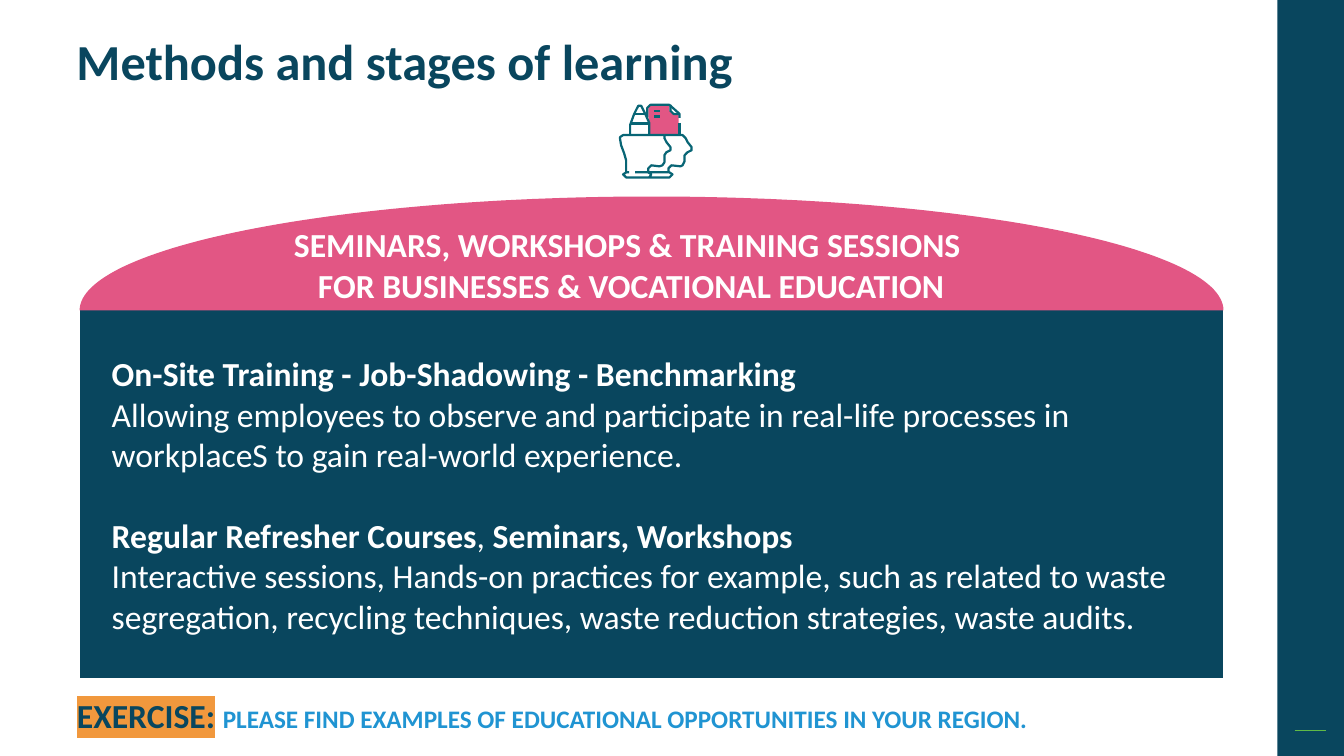
import math
from lxml import etree
from pptx import Presentation, util as u
from pptx.dml.color import RGBColor
from pptx.enum import shapes, text
from pptx.oxml import ns

CELL = u.Inches(0.01)  # the slide is a grid of 1333 columns by 750 rows
COLUMNS, ROWS = 1333, 750
NAVY, PINK, TEAL, WHITE = "09465E", "E25684", "086575", "FFFFFF"

presentation = Presentation()
presentation.slide_width, presentation.slide_height = COLUMNS * CELL, ROWS * CELL
slide = presentation.slides.add_slide(presentation.slide_layouts[6])


def paint(target, color):
    """Give a fill, a line's fill or a font one solid hex colour."""
    if hasattr(target, "solid"):
        target.solid()
        target = target.fore_color
    else:
        target = target.color
    target.rgb = RGBColor.from_string(color)


def outline(contours, fill=None, line=None):
    """Draw contours of grid points as one filled outline or as open strokes."""
    contours = [[(x * CELL, y * CELL) for x, y in contour] for contour in contours]
    builder = slide.shapes.build_freeform(*contours[0][0])
    for index, (start, *others) in enumerate(contours):
        if index:
            builder.move_to(*start)
        builder.add_line_segments(others, close=fill is not None)
    shape = builder.convert_to_shape()
    shape.shadow.inherit = False
    if fill:
        paint(shape.fill, fill)
        shape.line.fill.background()
    else:
        shape.fill.background()
        paint(shape.line, line)
        shape.line.width = u.Pt(1.6)


# Side band with its short rule
band = slide.shapes.add_shape(
    shapes.MSO_SHAPE.RECTANGLE, 1267 * CELL, 0, 66 * CELL, ROWS * CELL)
band.shadow.inherit = False
paint(band.fill, NAVY)
band.line.fill.background()
rule = slide.shapes.add_connector(
    shapes.MSO_CONNECTOR.STRAIGHT, 1284 * CELL, 725 * CELL, 1315 * CELL, 725 * CELL)
paint(rule.line, "60BA47")
rule.line.width = u.Pt(1)
etree.SubElement(rule._element.spPr, ns.qn("a:effectLst"))

# Panel under a half-ellipse dome
left, right, dome_top, dome_base, panel_bottom = 79, 1213.5, 195, 308, 672.5
center, radius = (left + right) / 2, (right - left) / 2
outline([[(left, 306), (right, 306), (right, panel_bottom), (left, panel_bottom)]], fill=NAVY)
angles = [math.pi * step / 120 for step in range(121)]
outline([[(center - radius * math.cos(angle),
           dome_base - (dome_base - dome_top) * math.sin(angle)) for angle in angles]],
        fill=PINK)

# Learning icon: page, pencil and two heads
outline([[(643, 116), (643, 107), (645, 105), (664, 105), (664, 110), (668, 113),
          (673, 113), (673, 133), (645, 133), (645, 124)]], fill=PINK)
for text_row in (110.5, 115.5):
    outline([[(649, text_row), (655, text_row)]], line=TEAL)
icon_strokes = {
    "page": [(642, 116), (642, 107), (645, 104), (664, 104), (674, 113), (674, 117)],
    "page fold": [(665, 104), (665, 110), (668, 113), (674, 113)],
    "page edge": [(674, 122), (674, 133)],
    "pencil": [(625, 134), (625, 124), (629, 113), (633, 105), (636, 105),
               (640, 113), (644, 122), (644, 134)],
    "pencil tip": [(629, 113), (640, 113)],
    "pencil collar": [(625, 122.5), (644, 122.5)],
    "front head": [(624, 171), (621, 171), (621, 159), (619, 152), (616, 144), (615, 138),
                   (615, 136), (618, 134), (659, 134), (659, 137), (661, 141), (665, 146),
                   (665, 149), (661, 151), (659, 154), (659, 161), (657, 164), (654, 165),
                   (646, 164), (643, 167), (643, 171), (630, 171)],
    "back head": [(659, 134), (677, 134), (680, 137), (682, 141), (686, 146), (686, 149),
                  (682, 151), (679, 154), (679, 160), (677, 164), (675, 165), (666, 164),
                  (663, 167), (663, 171)],
    "base": [(621, 171), (618, 173), (621, 176), (664, 176), (667, 173), (664, 171),
             (643, 171), (646, 173), (644, 176)],
}
outline(list(icon_strokes.values()), line=TEAL)

# Texts: box, size, colour, alignment, paragraphs of (words, bold) runs
LEFT, CENTER = text.PP_ALIGN.LEFT, text.PP_ALIGN.CENTER
texts = [
    ((66, 32, 841, 61), 36, NAVY, LEFT, [[("Methods and stages of learning", True)]]),
    ((134.5, 217.5, 983, 91), 24, WHITE, CENTER, [
        [("SEMINARS, WORKSHOPS & TRAINING SESSIONS ", True)],
        [("FOR BUSINESSES & VOCATIONAL EDUCATION", True)]]),
    ((101, 345.5, 1099, 320), 24, WHITE, LEFT, [
        [("On-Site Training - Job-Shadowing - Benchmarking", True)],
        [("Allowing employees to observe and participate in real-life processes in "
          "workplaceS to gain real-world experience.", False)],
        [("Regular Refresher Courses", True), (", ", False), ("Seminars, Workshops", True)],
        [("Interactive sessions, Hands-on practices for example, such as related to waste "
          "segregation, recycling techniques, waste reduction strategies, waste audits.",
          False)]]),
    ((66.5, 684.5, 1094, 50), 24, NAVY, LEFT, [
        [("EXERCISE:", True), (" ", True),
         ("PLEASE FIND EXAMPLES OF EDUCATIONAL OPPORTUNITIES IN YOUR REGION.", True)]]),
]
boxes = []
for place, size, color, alignment, paragraphs in texts:
    box = slide.shapes.add_textbox(*(int(length * CELL) for length in place))
    boxes.append(box)
    frame = box.text_frame
    frame.word_wrap = True
    for index, runs in enumerate(paragraphs):
        paragraph = frame.add_paragraph() if index else frame.paragraphs[0]
        paragraph.alignment = alignment
        paragraph.font.name, paragraph.font.size = "Calibri", u.Pt(size)
        paint(paragraph.font, color)
        for words, bold in runs:
            run = paragraph.add_run()
            run.text, run.font.bold = words, bold

title, _, methods, exercise = boxes
title.text_frame.paragraphs[0].line_spacing = 0.9
paint(methods.fill, NAVY)
methods.text_frame.paragraphs[2].space_before = u.Pt(29)

label, _, request = exercise.text_frame.paragraphs[0].runs
paint(label.font, NAVY)
highlight = etree.SubElement(label.font._element, ns.qn("a:highlight"))
etree.SubElement(highlight, ns.qn("a:srgbClr"), val="F1983D")
request.font.size = u.Pt(18)
paint(request.font, "2094D2")

presentation.save("out.pptx")
